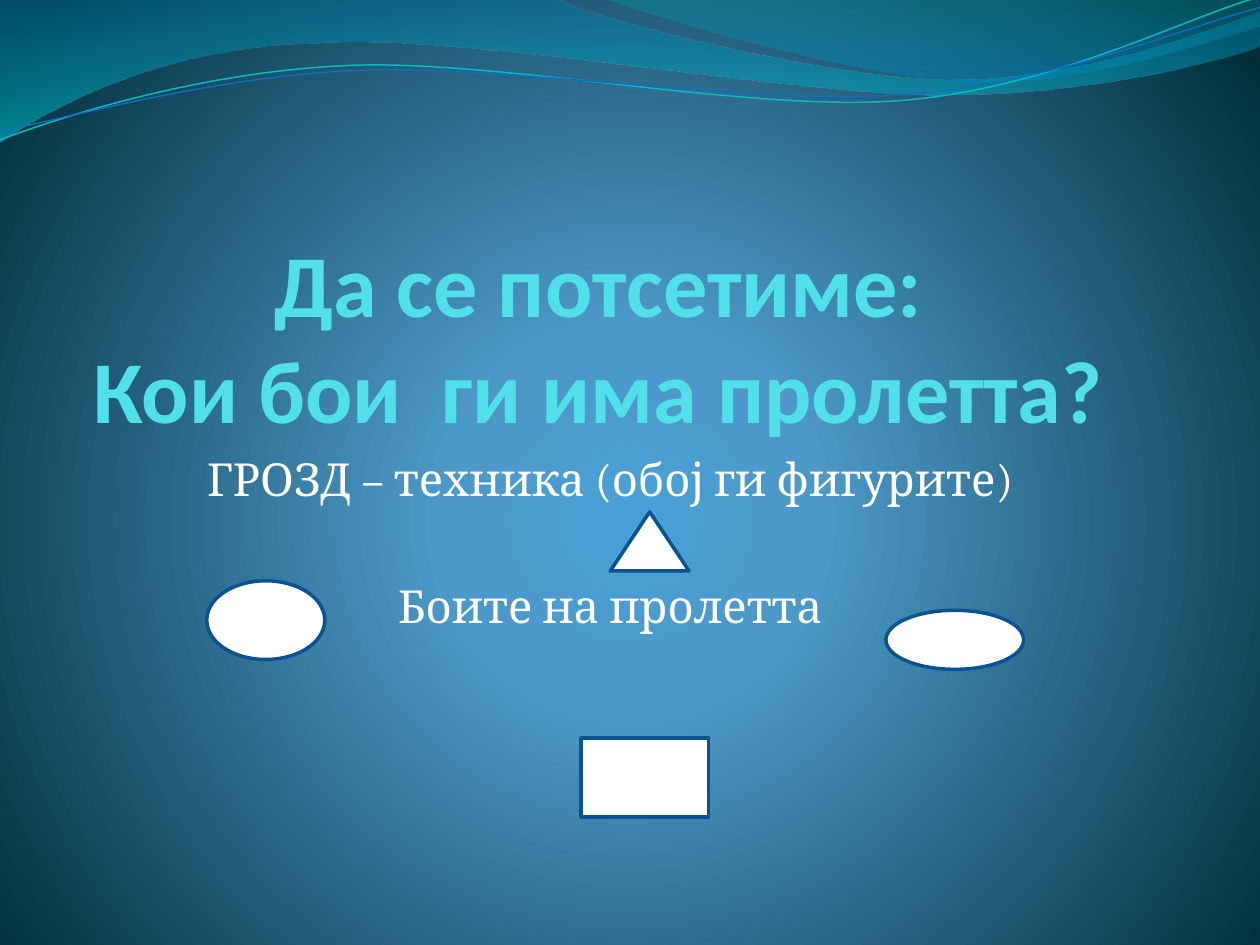
from dataclasses import dataclass

from lxml import etree
from pptx import Presentation
from pptx.dml.color import RGBColor
from pptx.enum.shapes import MSO_SHAPE
from pptx.enum.text import MSO_ANCHOR, PP_ALIGN
from pptx.oxml.ns import qn
from pptx.util import Inches, Pt

ELLIPSE, TRIANGLE, RECTANGLE = MSO_SHAPE.OVAL, MSO_SHAPE.ISOSCELES_TRIANGLE, MSO_SHAPE.RECTANGLE
TOP, BOTTOM, CENTER = MSO_ANCHOR.TOP, MSO_ANCHOR.BOTTOM, PP_ALIGN.CENTER

WIDTH, HEIGHT = 10, 7.5
CELL = WIDTH / 64  # a grid of 64 columns and 48 rows


@dataclass(frozen=True)
class Theme:
    title_font: str = "Calibri"
    body_font: str = "Cambria"
    title_size: float = 50.4
    body_size: float = 26
    title_color: str = "51E0EA"
    white: str = "FFFFFF"
    outline: str = "0B5292"
    outline_width: float = 2
    # Gradient stops: position, colour and opacity, all in percent
    backdrop: tuple = ((0, "4AA0D6", 100), (25, "4C98C7", 100), (100, "002C38", 100))
    wide_wave: tuple = ((0, "0074A1", 45), (100, "00C6CF", 55))
    corner_wave: tuple = ((0, "00A1A9", 30), (80, "008BBF", 45))
    teal_line: str = "0AB8BF"
    blue_line: str = "0F6FC6"


# Each outline is a start point, then steps: one point is a line, three are a curve.
WIDE_WAVE = [
    [(0, 0)], [(4.4, -0.01)],
    [(4.76, 0.17), (6.64, 0.63), (7.58, 0.63)],
    [(8.53, 0.63), (9.58, 0.26), (10, 0.09)],
    [(10.01, 0.36)],
    [(9.83, 0.44), (8.7, 0.76), (7.46, 0.75)],
    [(6.22, 0.75), (3.82, 0.28), (2.57, 0.34)],
    [(1.29, 0.36), (0.46, 0.83), (-0.01, 1.13)],
    [(0, 0)],
]
CORNER_WAVE = [
    [(4.79, -0.01)],
    [(5.09, 0.11), (6.82, 0.62), (7.69, 0.65)],
    [(8.56, 0.69), (9.61, 0.32), (10, 0.21)],
    [(10, 0)], [(4.79, -0.01)],
]
TEAL_LINE = [
    [(0, 1.11)],
    [(0.48, 0.93), (1.58, 0.57), (2.77, 0.52)],
    [(3.95, 0.47), (5.93, 0.89), (7.13, 0.8)],
    [(8.33, 0.71), (9.38, 0.15), (9.98, -0.02)],
]
BLUE_LINE = [
    [(0, 1.04)],
    [(0.47, 0.96), (1.64, 0.61), (2.83, 0.56)],
    [(4.03, 0.51), (5.97, 0.84), (7.17, 0.75)],
    [(8.36, 0.67), (9.41, 0.21), (10, 0.06)],
]


def grid(*cells):
    return [Inches(cell * CELL) for cell in cells]


def bend(shape, steps):
    """Join each three line segments that stand for a curve into one cubic curve."""
    segments = iter(shape.element.xpath(".//a:lnTo"))
    for step in steps[1:]:
        group = [next(segments) for _ in step]
        if len(group) == 3:
            curve = etree.Element(qn("a:cubicBezTo"))
            group[0].addprevious(curve)
            for segment in group:
                curve.append(segment[0])
                segment.getparent().remove(segment)


def set_gradient(parent, stops, radial=False):
    """Replace the solid fill inside parent by a gradient."""
    gradient = etree.Element(qn("a:gradFill"), rotWithShape="1")
    stop_list = etree.SubElement(gradient, qn("a:gsLst"))
    for position, color, opacity in stops:
        stop = etree.SubElement(stop_list, qn("a:gs"), pos=str(position * 1000))
        tint = etree.SubElement(stop, qn("a:srgbClr"), val=color)
        if opacity < 100:
            etree.SubElement(tint, qn("a:alpha"), val=str(opacity * 1000))
    if radial:
        circle = etree.SubElement(gradient, qn("a:path"), path="circle")
        etree.SubElement(circle, qn("a:fillToRect"),
                         l="10000", t="110000", r="10000", b="100000")
    else:
        etree.SubElement(gradient, qn("a:lin"), ang="5400000", scaled="0")
    parent.replace(parent.find(qn("a:solidFill")), gradient)


class SlideBuilder:
    def __init__(self, page, theme):
        self.page, self.theme = page, theme

    def backdrop(self):
        self.page.background.fill.solid()
        set_gradient(self.page.element.xpath(".//p:bgPr")[0], self.theme.backdrop, radial=True)

    def outline(self, shape, color, width):
        shape.line.color.rgb = RGBColor.from_string(color)
        shape.line.width = Pt(width)

    def freeform(self, steps, close):
        start, *rest = [(Inches(x), Inches(y)) for step in steps for x, y in step]
        builder = self.page.shapes.build_freeform(*start)
        builder.add_line_segments(rest, close=close)
        shape = builder.convert_to_shape()
        bend(shape, steps)
        shape.shadow.inherit = False
        return shape

    def wave(self, steps, stops):
        shape = self.freeform(steps, close=True)
        shape.line.fill.background()
        shape.fill.solid()
        set_gradient(shape.element.spPr, stops)

    def wave_line(self, steps, color, width):
        shape = self.freeform(steps, close=False)
        shape.fill.background()
        self.outline(shape, color, width)

    def figure(self, kind, *cells):
        shape = self.page.shapes.add_shape(kind, *grid(*cells))
        shape.shadow.inherit = False
        shape.fill.solid()
        shape.fill.fore_color.rgb = RGBColor.from_string(self.theme.white)
        self.outline(shape, self.theme.outline, self.theme.outline_width)

    def text(self, cells, paragraphs, color, frame_format, font_format):
        """Add centred paragraphs, each given as its lines and the points before it."""
        frame = self.page.shapes.add_textbox(*grid(*cells)).text_frame
        for name, value in {"word_wrap": True, "margin_left": 0, **frame_format}.items():
            setattr(frame, name, value)
        for index, (lines, gap) in enumerate(paragraphs):
            para = frame.add_paragraph() if index else frame.paragraphs[0]
            para.alignment, para.space_before = CENTER, Pt(gap)
            for number, words in enumerate(lines):
                if number:
                    para.add_line_break()
                span = para.add_run()
                span.text = words
                for name, value in font_format.items():
                    setattr(span.font, name, value)
                span.font.color.rgb = RGBColor.from_string(color)


def main():
    deck = Presentation()
    deck.slide_width, deck.slide_height = Inches(WIDTH), Inches(HEIGHT)
    theme = Theme()
    slide = SlideBuilder(deck.slides.add_slide(deck.slide_layouts[6]), theme)

    slide.backdrop()
    slide.wave(WIDE_WAVE, theme.wide_wave)
    slide.wave(CORNER_WAVE, theme.corner_wave)
    slide.wave_line(TEAL_LINE, theme.teal_line, 0.85)
    slide.wave_line(BLUE_LINE, theme.blue_line, 0.75)

    slide.text((3.7, 9.6, 55, 12.8),
               [(("Да се потсетиме:", "Кои бои  ги има пролетта?"), 0)],
               theme.title_color,
               {"vertical_anchor": BOTTOM, "margin_top": 0, "margin_bottom": 0,
                "margin_right": Inches(0.25)},
               {"name": theme.title_font, "size": Pt(theme.title_size), "bold": True})
    slide.text((3.7, 22.6, 55, 22.4),
               [(("ГРОЗД – техника (обој ги фигурите)",), 5), (("Боите на пролетта",), 41.5)],
               theme.white,
               {"vertical_anchor": TOP, "margin_right": Inches(0.06)},
               {"name": theme.body_font, "size": Pt(theme.body_size)})

    slide.figure(ELLIPSE, 45, 31, 7, 3)
    slide.figure(TRIANGLE, 31, 26, 4, 3)
    slide.figure(RECTANGLE, 29.5, 37.5, 6.5, 4)
    slide.figure(ELLIPSE, 10.5, 29.5, 6, 4)
    deck.save("out.pptx")


if __name__ == "__main__":
    main()
